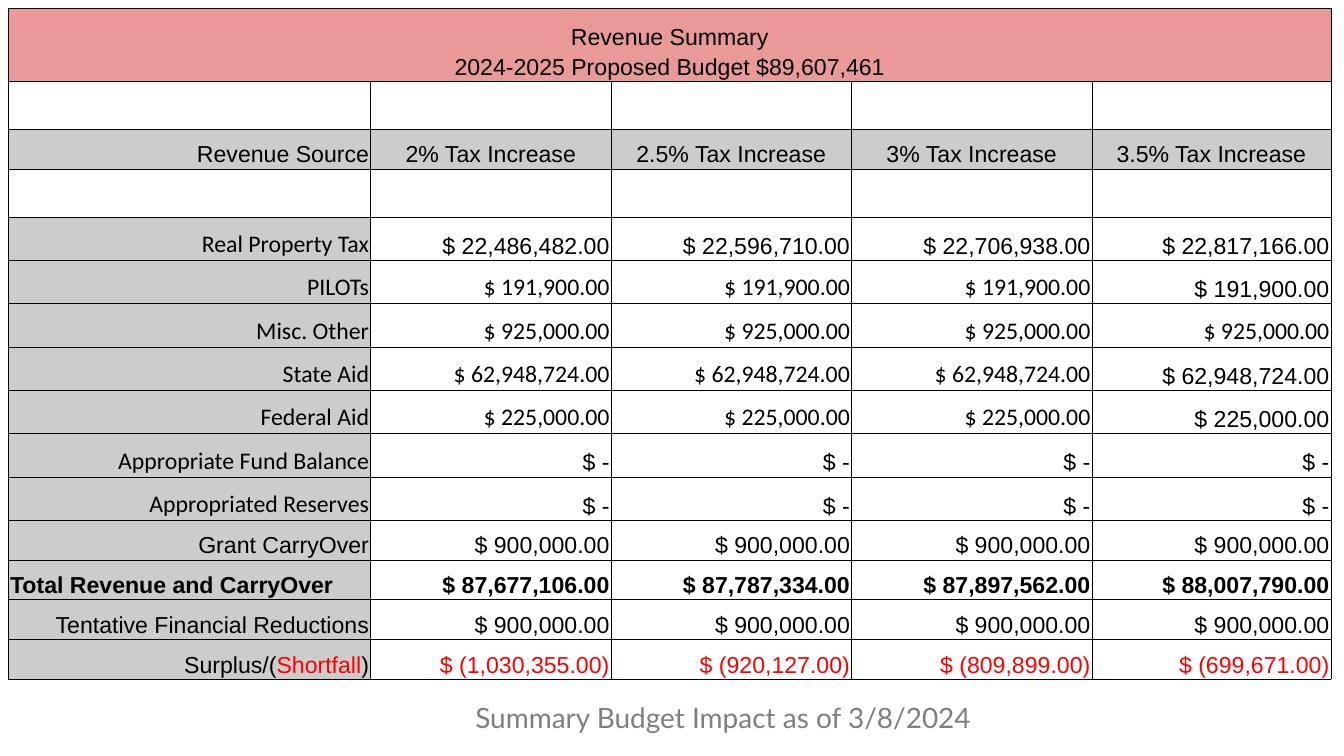
from dataclasses import dataclass

from lxml import etree
from pptx import Presentation
from pptx.dml.color import RGBColor
from pptx.enum import text
from pptx.oxml import ns
from pptx.util import Inches, Pt


@dataclass(frozen=True)
class Theme:
    """Colours, fonts and type sizes of the slide."""
    black: str = "000000"
    red: str = "FF0000"
    grey: str = "CCCCCC"
    pink: str = "EA9999"
    caption: str = "7F7F7F"
    arial: tuple = ("Arial", 33)
    calibri: tuple = ("Calibri", 34)
    lato: tuple = ("Lato", 40)
    border: float = 0.6


T = Theme()
LEFT, CENTER, RIGHT = text.PP_ALIGN.LEFT, text.PP_ALIGN.CENTER, text.PP_ALIGN.RIGHT
COLS = [7.18, 4.77, 4.77, 4.77, 4.74]
ROWS = [1.44, 0.95, 0.79, 0.95] + [0.86] * 7 + [0.79] * 4
RATES = ["2%", "2.5%", "3%", "3.5%"]
# Each source: label, amount per rate, number of leading cells in Calibri.
SOURCES = [
    ("Real Property Tax", [22486482, 22596710, 22706938, 22817166], 1),
    ("PILOTs", [191900] * 4, 4),
    ("Misc. Other", [925000] * 4, 5),
    ("State Aid", [62948724] * 4, 4),
    ("Federal Aid", [225000] * 4, 4),
    ("Appropriate Fund Balance", [0] * 4, 1),
    ("Appropriated Reserves", [0] * 4, 1),
    ("Grant CarryOver", [900000] * 4, 0),
    ("Total Revenue and CarryOver", [87677106, 87787334, 87897562, 88007790], 0),
    ("Tentative Financial Reductions", [900000] * 4, 0),
    ("Surplus/(Shortfall)", [-1030355, -920127, -809899, -699671], 0),
]


def money(v):
    """Format an amount in accounting style."""
    if v == 0:
        return "$ -"
    return f"$ {v:,.2f}" if v > 0 else f"$ ({-v:,.2f})"


def write(tf, lines, font=T.arial, color=T.black, bold=False, align=LEFT, spacing=1.15):
    """Write lines, each a string or a list of (text, colour) runs."""
    for i, line in enumerate(lines):
        p = tf.paragraphs[0] if i == 0 else tf.add_paragraph()
        p.alignment, p.line_spacing = align, spacing
        for words, c in [(line, color)] if isinstance(line, str) else line:
            r = p.add_run()
            r.text = words
            r.font.name, r.font.size, r.font.bold = font[0], Pt(font[1]), bold
            r.font.color.rgb = RGBColor.from_string(c)


def style_cell(cell, fill=None):
    """Set the borders, margins, anchor and fill of a cell."""
    tc_pr = cell._tc.get_or_add_tcPr()
    for side in ("a:lnL", "a:lnR", "a:lnT", "a:lnB"):
        ln = etree.SubElement(tc_pr, ns.qn(side), w=str(Pt(T.border)))
        solid = etree.SubElement(ln, ns.qn("a:solidFill"))
        etree.SubElement(solid, ns.qn("a:srgbClr"), val=T.black)
    cell.margin_left = cell.margin_right = Inches(0.03)
    cell.margin_top = cell.margin_bottom = Inches(0.02)
    cell.vertical_anchor = text.MSO_ANCHOR.BOTTOM
    if fill:
        cell.fill.solid()
        cell.fill.fore_color.rgb = RGBColor.from_string(fill)
    else:
        cell.fill.background()


def add_grid(s):
    """Add the empty styled table and return it."""
    table = s.shapes.add_table(len(ROWS), len(COLS), Inches(0.17), Inches(0.17),
                               Inches(sum(COLS)), Inches(sum(ROWS))).table
    table.first_row = table.horz_banding = False
    for col, w in zip(table.columns, COLS):
        col.width = Inches(w)
    for row, h in zip(table.rows, ROWS):
        row.height = Inches(h)
    for i in range(len(ROWS)):
        for j in range(len(COLS)):
            shaded = i == 2 or (i > 3 and j == 0)
            style_cell(table.cell(i, j), T.pink if i == 0 else T.grey if shaded else None)
    table.cell(0, 0).merge(table.cell(0, len(COLS) - 1))
    return table


def fill_headings(table):
    """Write the title and the column headings."""
    write(table.cell(0, 0).text_frame,
          ["Revenue Summary", "2024-2025 Proposed Budget $89,607,461"], align=CENTER)
    write(table.cell(2, 0).text_frame, ["Revenue Source"], align=RIGHT)
    for j, rate in enumerate(RATES, 1):
        write(table.cell(2, j).text_frame, [f"{rate} Tax Increase"], align=CENTER)


def fill_source(table, i, label, amounts, calibri_cells):
    """Write one revenue source and its amounts in row i."""
    total = label.startswith("Total")
    if label.startswith("Surplus"):
        label = [("Surplus/(", T.black), ("Shortfall", T.red), (")", T.black)]
    write(table.cell(i, 0).text_frame, [label], bold=total,
          font=T.calibri if calibri_cells else T.arial, align=LEFT if total else RIGHT)
    for j, v in enumerate(amounts, 1):
        write(table.cell(i, j).text_frame, [money(v)], bold=total, align=RIGHT,
              font=T.calibri if j < calibri_cells else T.arial,
              color=T.red if v < 0 else T.black)


def add_caption(s, words):
    """Add the caption below the table."""
    tf = s.shapes.add_textbox(Inches(9.33), Inches(13.79), Inches(11.24), Inches(0.96)).text_frame
    tf.word_wrap = True
    tf.margin_left = tf.margin_right = tf.margin_top = tf.margin_bottom = Inches(0.1)
    write(tf, [words], font=T.lato, color=T.caption, spacing=1.0)


def main():
    """Build the revenue summary slide."""
    prs = Presentation()
    prs.slide_width, prs.slide_height = Inches(26.66), Inches(15)
    s = prs.slides.add_slide(prs.slide_layouts[6])
    table = add_grid(s)
    fill_headings(table)
    for i, source in enumerate(SOURCES, 4):
        fill_source(table, i, *source)
    add_caption(s, "Summary Budget Impact as of 3/8/2024")
    prs.save("out.pptx")


if __name__ == "__main__":
    main()
